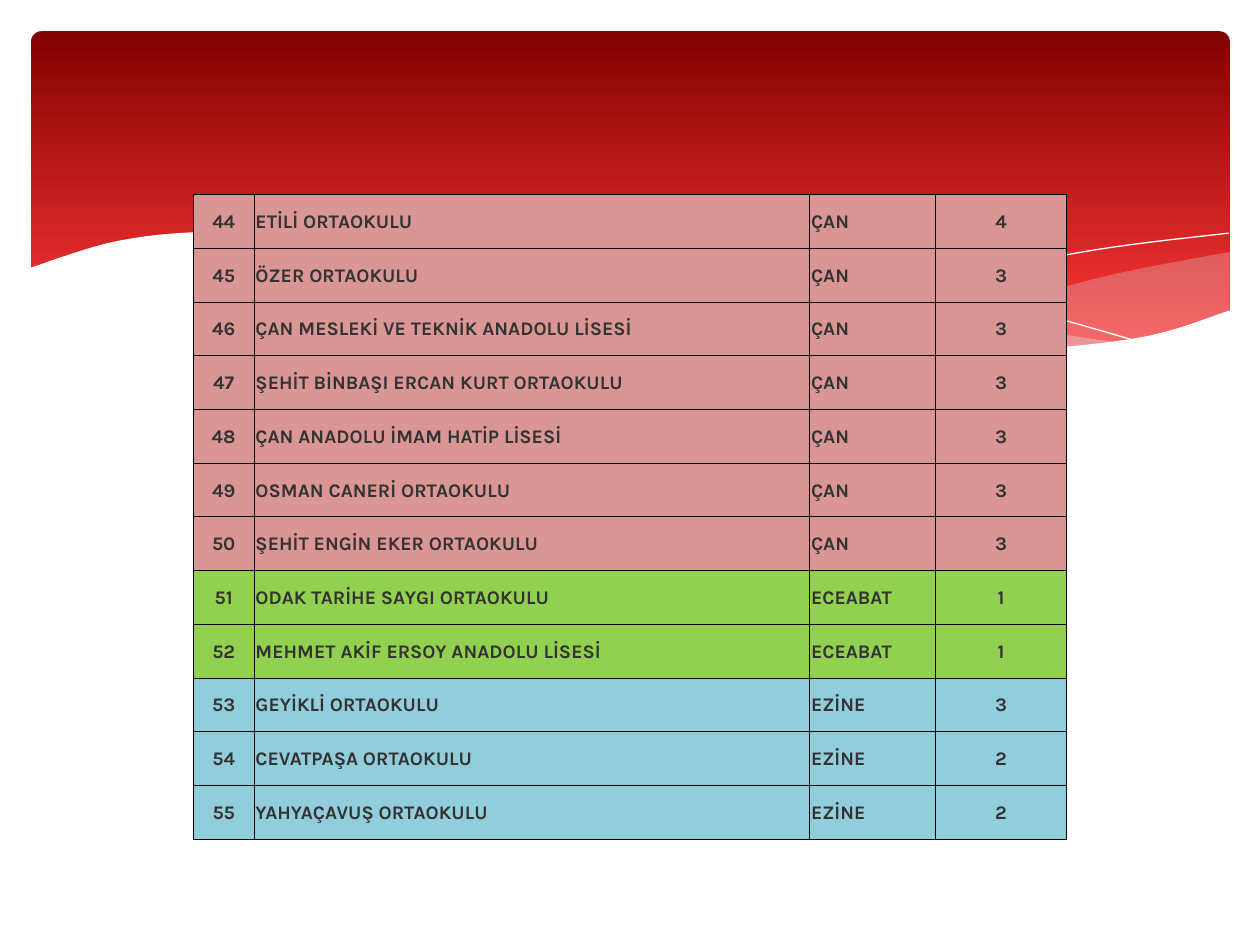
"""Build a slide listing schools by district under a red wave header."""
from dataclasses import dataclass

from lxml import etree
from pptx import Presentation
from pptx.dml.color import RGBColor
from pptx.enum.shapes import MSO_SHAPE
from pptx.enum.text import MSO_ANCHOR, PP_ALIGN
from pptx.oxml.ns import qn
from pptx.util import Cm, Pt

ROUNDED = MSO_SHAPE.ROUNDED_RECTANGLE
MIDDLE = MSO_ANCHOR.MIDDLE
CENTER, LEFT = PP_ALIGN.CENTER, PP_ALIGN.LEFT


@dataclass(frozen=True)
class Theme:
    font: str = "Karla"
    size: float = 11
    border_width: float = 0.5
    text: RGBColor = RGBColor(0x33, 0x33, 0x33)
    border: RGBColor = RGBColor(0x00, 0x00, 0x00)
    header_top: RGBColor = RGBColor(0x82, 0x01, 0x01)
    header_bottom: RGBColor = RGBColor(0xFE, 0x37, 0x37)
    swell: RGBColor = RGBColor(0xDE, 0xDE, 0xE0)
    paper: RGBColor = RGBColor(0xFF, 0xFF, 0xFF)
    rose: RGBColor = RGBColor(0xDA, 0x96, 0x94)
    green: RGBColor = RGBColor(0x92, 0xD0, 0x50)
    blue: RGBColor = RGBColor(0x92, 0xCD, 0xDC)


THEME = Theme()

FIRST_NUMBER = 44
DISTRICTS = [
    ("ÇAN", THEME.rose, [
        ("ETİLİ ORTAOKULU", 4),
        ("ÖZER ORTAOKULU", 3),
        ("ÇAN MESLEKİ VE TEKNİK ANADOLU LİSESİ", 3),
        ("ŞEHİT BİNBAŞI ERCAN KURT ORTAOKULU", 3),
        ("ÇAN ANADOLU İMAM HATİP LİSESİ", 3),
        ("OSMAN CANERİ ORTAOKULU", 3),
        ("ŞEHİT ENGİN EKER ORTAOKULU", 3),
    ]),
    ("ECEABAT", THEME.green, [
        ("ODAK TARİHE SAYGI ORTAOKULU", 1),
        ("MEHMET AKİF ERSOY ANADOLU LİSESİ", 1),
    ]),
    ("EZİNE", THEME.blue, [
        ("GEYİKLİ ORTAOKULU", 3),
        ("CEVATPAŞA ORTAOKULU", 2),
        ("YAHYAÇAVUŞ ORTAOKULU", 2),
    ]),
]
ROWS = [
    (school, district, count, fill)
    for district, fill, schools in DISTRICTS
    for school, count in schools
]
COLUMNS = [(1.22, CENTER), (11.2, LEFT), (2.54, LEFT), (2.64, CENTER)]
TABLE_WIDTH = sum(width for width, alignment in COLUMNS)
TABLE_HEIGHT = 13

CURVE_STEPS = 8
RIGHT_SWELL = [
    [(24.79, 5.08), (22.63, 5.49), (20.45, 6.02), (16.79, 6.73)],
    [(16.79, 6.73), (18.92, 6.99), (20.68, 7.06), (22.78, 6.86), (24.79, 6.27)],
]
MIDDLE_SWELL = [
    [(22.68, 6.93), (19.69, 6.45), (15.98, 5.64), (12.75, 4.98), (9.65, 4.7),
     (7.26, 4.85)],
    [(7.26, 4.85), (11.4, 5.64), (15.27, 6.48), (18.34, 6.96), (20.78, 7.06),
     (22.68, 6.93)],
]
FALLING_LINE = [
    [(7.85, 4.95), (10.19, 4.75), (12.95, 4.88), (16.89, 5.41), (20.19, 6.12),
     (23.04, 6.91)],
]
RISING_LINE = [[(15.57, 6.53), (19, 5.66), (22, 5.05), (24.77, 4.7)]]
PAPER_EDGE = [
    [(24.82, 6.25), (22.83, 6.83), (19.76, 7.01), (15.32, 6.45), (11.35, 5.59),
     (7.42, 4.83), (4.5, 4.67), (2.41, 4.85), (0.58, 5.41)],
    [(0.58, 8.36), (24.82, 8.36)],
]
FILLED_WAVE, OPEN_LINE = True, False
WAVES = [
    (RIGHT_SWELL, FILLED_WAVE, THEME.swell, 29),
    (MIDDLE_SWELL, FILLED_WAVE, THEME.swell, 40),
    (FALLING_LINE, OPEN_LINE, THEME.paper, 100),
    (RISING_LINE, OPEN_LINE, THEME.paper, 100),
    (PAPER_EDGE, FILLED_WAVE, THEME.paper, 100),
]


def smooth_curve(knots):
    """Return closely spaced points on a Catmull-Rom spline through the knots."""
    padded = [knots[0], *knots, knots[-1]]
    curve = [knots[0]]
    for before, start, end, after in zip(padded, padded[1:], padded[2:], padded[3:]):
        for step in range(1, CURVE_STEPS + 1):
            t = step / CURVE_STEPS
            curve.append(tuple(
                b + ((c - a) * t
                     + (2 * a - 5 * b + 4 * c - d) * t ** 2
                     + (3 * b - a - 3 * c + d) * t ** 3) / 2
                for a, b, c, d in zip(before, start, end, after)
            ))
    return curve


def add_borders(cell):
    """Put a thin solid line on each side of a cell, ahead of its fill."""
    properties = cell._tc.get_or_add_tcPr()
    for place, side in enumerate(("a:lnL", "a:lnR", "a:lnT", "a:lnB")):
        line = etree.Element(qn(side), w=str(Pt(THEME.border_width)))
        solid = etree.SubElement(line, qn("a:solidFill"))
        etree.SubElement(solid, qn("a:srgbClr"), val=str(THEME.border))
        properties.insert(place, line)


deck = Presentation()
deck.slide_width, deck.slide_height = Cm(25.4), Cm(19.05)
blank_layout = deck.slide_layouts[6]
page = deck.slides.add_slide(blank_layout)

header = page.shapes.add_shape(ROUNDED, Cm(0.63), Cm(0.63), Cm(24.16), Cm(6.86))
header.adjustments[0] = 0.03
header.shadow.inherit = False
header.line.fill.background()
header.fill.gradient()
header.fill.gradient_angle = 270
header_stops = [(0, THEME.header_top), (0.9, THEME.header_bottom)]
for stop, (position, color) in zip(header.fill.gradient_stops, header_stops):
    stop.position = position
    stop.color.rgb = color

for strokes, filled, color, opacity in WAVES:
    points = [
        (Cm(x), Cm(y)) for stroke in strokes for x, y in smooth_curve(stroke)
    ]
    builder = page.shapes.build_freeform(*points[0])
    builder.add_line_segments(points[1:], close=filled)
    wave = builder.convert_to_shape()
    wave.shadow.inherit = False
    if filled:
        wave.line.fill.background()
        wave.fill.solid()
        wave.fill.fore_color.rgb = color
        fill_color = wave._element.spPr.find(qn("a:solidFill")).find(qn("a:srgbClr"))
        etree.SubElement(fill_color, qn("a:alpha"), val=str(opacity * 1000))
    else:
        wave.fill.background()
        wave.line.color.rgb = color
        wave.line.width = Pt(0)

frame = page.shapes.add_table(
    len(ROWS), len(COLUMNS),
    Cm(3.9), Cm(3.92), Cm(TABLE_WIDTH), Cm(TABLE_HEIGHT),
)
table = frame.table
table.first_row = table.horz_banding = False
for column, (width, alignment) in zip(table.columns, COLUMNS):
    column.width = Cm(width)

numbered_rows = enumerate(ROWS, start=FIRST_NUMBER)
for row, (number, (school, district, count, fill)) in zip(table.rows, numbered_rows):
    row.height = Cm(TABLE_HEIGHT / len(ROWS))
    values = [number, school, district, count]
    for cell, value, (width, alignment) in zip(row.cells, values, COLUMNS):
        cell.fill.solid()
        cell.fill.fore_color.rgb = fill
        cell.vertical_anchor = MIDDLE
        cell.margin_left = cell.margin_right = cell.margin_top = Cm(0.03)
        cell.margin_bottom = 0
        add_borders(cell)
        cell.text_frame.text = str(value)
        para = cell.text_frame.paragraphs[0]
        para.alignment = alignment
        span = para.runs[0]
        span.font.name = THEME.font
        span.font.size = Pt(THEME.size)
        span.font.bold = True
        span.font.color.rgb = THEME.text

deck.save("out.pptx")
